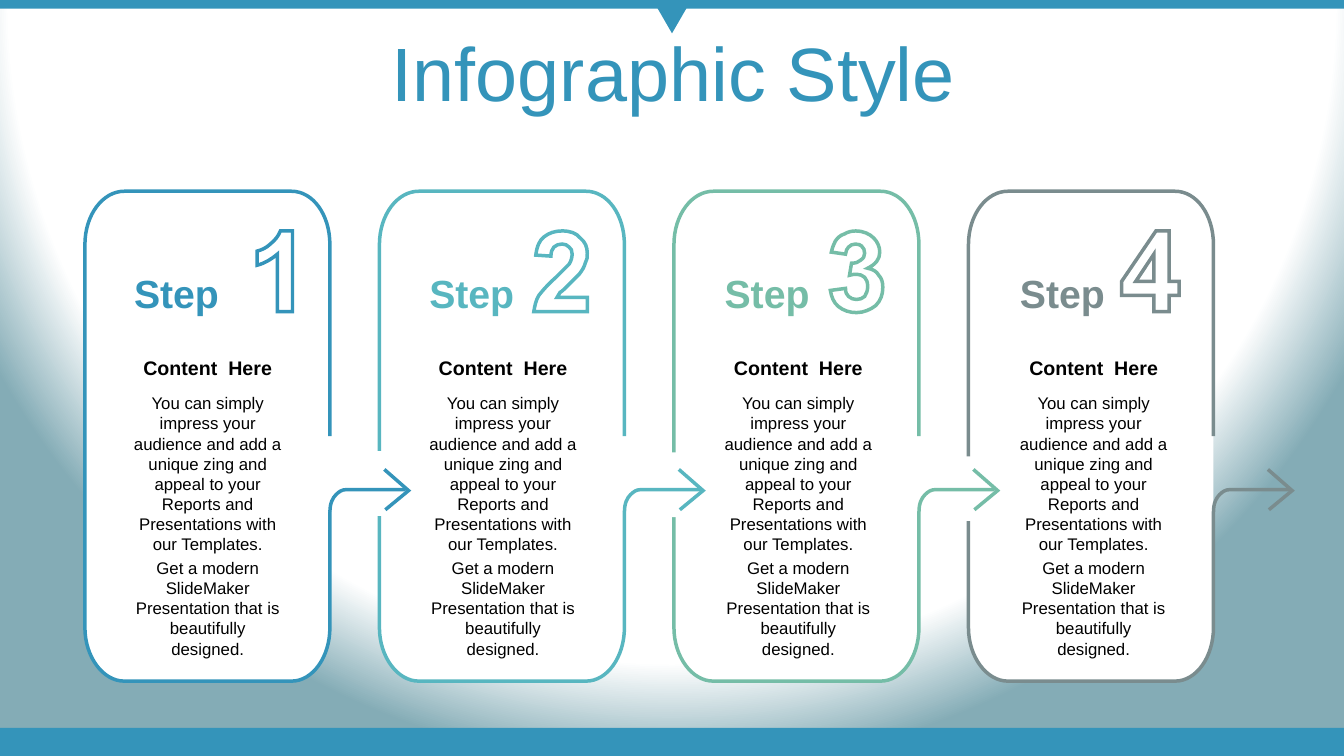
from dataclasses import dataclass

from lxml.etree import SubElement
from pptx import Presentation
from pptx.dml.color import RGBColor
from pptx.enum.shapes import MSO_SHAPE
from pptx.enum.text import MSO_ANCHOR, MSO_AUTO_SIZE, PP_ALIGN
from pptx.oxml import parse_xml
from pptx.oxml.ns import nsdecls, qn
from pptx.util import Cm, Pt


@dataclass(frozen=True)
class Theme:
    font: str = "Arial"
    accent: str = "3494BA"
    white: str = "FFFFFF"
    black: str = "000000"
    haze: str = "84ACB6"
    title_size: int = 54
    step_size: int = 28
    heading_size: int = 14
    body_size: int = 12
    stroke: float = 2.5


@dataclass(frozen=True)
class Box:
    left: float
    top: float
    width: float
    height: float

    def inner(self, left, top, width, height):
        """Box placed relative to this one's top left corner."""
        return Box(self.left + left, self.top + top, width, height)

    def lengths(self):
        return Cm(self.left), Cm(self.top), Cm(self.width), Cm(self.height)


@dataclass(frozen=True)
class Step:
    color: str
    digit: str
    digit_left: float
    notch_top: float | None


THEME = Theme()
PAGE = Box(0, 0, 33.86, 19.05)
FIRST_CARD, CARD_PITCH = Box(2.14, 4.82, 6.17, 12.34), 7.42
FIRST_TEXT, TEXT_PITCH = Box(3.1, 6.65, 4.27, 9.76), 7.44

# Outlines are drawn on a grid of a hundredth of an inch.
GRID = Cm(2.54) / 100
CARD = ("M 243 318 L 243 433 C 243 462 226 486 205 486 L 39 486 C 18 486 0 462 0 433 "
        "L 0 53 C 0 23 18 0 39 0 L 205 0 C 226 0 243 23 243 53 L 243 243")
ARROW_TAIL = "M 318 296 L 259 296 C 255 296 252 298 249 301 C 246 304 243 309 243 318"
ARROW_HEAD = "M 297 276 L 321 297 L 298 316"
ONE = ("M 23 0 L 35 0 L 35 80 L 20 80 L 20 23 C 14 28 8 32 0 34 L 0 20 "
       "C 4 19 9 17 13 13 C 18 9 21 5 23 0 Z")
TWO = ("M 28 0 C 36 0 42 2 46 7 C 51 11 53 16 53 22 C 53 26 53 29 51 32 "
       "C 50 36 48 39 45 43 C 43 45 40 48 35 53 C 31 57 28 60 26 61 C 25 63 24 64 23 66 "
       "L 53 66 L 53 80 L 0 80 C 1 74 2 69 5 64 C 8 60 14 53 22 46 C 29 39 33 35 35 33 "
       "C 37 30 38 26 38 23 C 38 20 37 17 35 16 C 33 14 31 13 28 13 C 25 13 22 14 20 16 "
       "C 18 18 17 21 17 25 L 2 24 C 3 15 6 9 10 6 C 15 2 21 0 28 0 Z")
THREE = ("M 25 0 C 33 0 39 3 43 7 C 47 11 49 16 49 21 C 49 28 45 33 37 37 "
         "C 42 38 46 40 48 44 C 51 47 52 51 52 56 C 52 63 50 69 45 74 C 40 78 33 81 26 81 "
         "C 19 81 13 79 8 75 C 3 71 1 65 0 59 L 15 57 C 15 61 16 63 18 65 "
         "C 20 67 23 68 26 68 C 29 68 32 67 34 65 C 36 62 37 59 37 55 C 37 51 36 48 34 46 "
         "C 32 44 29 43 26 43 C 24 43 22 43 19 44 L 21 32 C 25 32 28 31 30 29 "
         "C 33 27 34 25 34 22 C 34 19 33 17 31 15 C 30 14 28 13 25 13 C 22 13 20 14 18 16 "
         "C 17 17 15 20 15 23 L 1 21 C 2 16 4 12 5 10 C 7 7 10 4 14 3 C 17 1 21 0 25 0 Z")
FOUR = ("M 32 23 L 14 50 L 32 50 Z M 34 0 L 47 0 L 47 50 L 57 50 L 57 64 L 47 64 "
        "L 47 80 L 32 80 L 32 64 L 0 64 L 0 50 Z")

STEPS = [
    Step("3494BA", ONE, 4.34, None),
    Step("58B6C0", TWO, 3.89, 6.55),
    Step("75BDA7", THREE, 3.94, 6.58),
    Step("7A8C8E", FOUR, 3.86, 6.68),
]
HEADING = ["Content  Here"]
BODY = [
    "You can simply impress your audience and add a unique zing and appeal to your "
    "Reports and Presentations with our Templates.",
    "Get a modern SlideMaker Presentation that is beautifully designed.",
]


def rgb(color):
    return RGBColor.from_string(color)


def commands_of(outline):
    """Split an outline into (letter, points) pairs."""
    point_counts = {"M": 1, "L": 1, "C": 3, "Z": 0}
    tokens = iter(outline.split())
    return [(letter, [(int(next(tokens)), int(next(tokens)))
                      for _ in range(point_counts[letter])])
            for letter in tokens]


def bend_curves(shape, commands):
    """Join the three segments of every C command into one Bezier curve."""
    nodes = iter(list(shape.element.find(".//" + qn("a:path"))))
    for letter, points in commands:
        first, *others = [next(nodes) for _ in points or [None]]
        if letter == "C":
            first.tag = qn("a:cubicBezTo")
            for node in others:
                first.append(node[0])
                node.getparent().remove(node)


def add_outline(page, left, top, outline, color, fill=None):
    commands = commands_of(outline)
    builder = page.shapes.build_freeform(*commands[0][1][0], scale=GRID)
    for letter, points in commands[1:]:
        if letter == "M":
            builder.move_to(*points[0])
        else:
            builder.add_line_segments(points, close=letter == "Z")
    shape = builder.convert_to_shape(Cm(left), Cm(top))
    bend_curves(shape, commands)
    shape.shadow.inherit = False
    if fill:
        shape.fill.solid()
        shape.fill.fore_color.rgb = rgb(fill)
    else:
        shape.fill.background()
    shape.line.color.rgb = rgb(color)
    shape.line.width = Pt(THEME.stroke)
    SubElement(shape.element.spPr.find(qn("a:ln")), qn("a:miter"), lim="800000")


def add_block(page, box, color, kind=MSO_SHAPE.RECTANGLE):
    block = page.shapes.add_shape(kind, *box.lengths())
    block.shadow.inherit = False
    block.fill.solid()
    block.fill.fore_color.rgb = rgb(color)
    block.line.fill.background()
    return block


def write(frame, texts, size, color, bold=False, anchor=MSO_ANCHOR.MIDDLE):
    frame.word_wrap = True
    frame.auto_size = MSO_AUTO_SIZE.NONE
    frame.vertical_anchor = anchor
    for index, text in enumerate(texts):
        para = frame.add_paragraph() if index else frame.paragraphs[0]
        para.alignment = PP_ALIGN.CENTER
        para.space_before = Pt(size * 0.2 if index else 0)
        span = para.add_run()
        span.text = text
        span.font.name = THEME.font
        span.font.size = Pt(size)
        span.font.bold = bold
        span.font.color.rgb = rgb(color)


def add_text(page, box, *content, **options):
    write(page.shapes.add_textbox(*box.lengths()).text_frame, *content, **options)


def add_backdrop(page, box):
    """Radial haze, top and bottom bars, and the pointer under the top bar."""
    page.background.fill.gradient()
    gradient = page.element.find(".//" + qn("a:gradFill"))
    stops = [(0, THEME.white), (86, THEME.white), (100, THEME.haze)]
    stop_xml = "".join(f'<a:gs pos="{place * 1000}"><a:srgbClr val="{color}"/></a:gs>'
                       for place, color in stops)
    gradient.getparent().replace(gradient, parse_xml(
        f'<a:gradFill {nsdecls("a")} rotWithShape="1"><a:gsLst>{stop_xml}</a:gsLst>'
        '<a:path path="circle"><a:fillToRect l="50000" t="-80000" r="50000" b="180000"/>'
        '</a:path></a:gradFill>'))
    add_block(page, box.inner(0, box.height - 0.71, box.width, 0.71), THEME.accent)
    add_block(page, box.inner(0, 0, box.width, 0.22), THEME.accent)
    pointer = box.inner((box.width - 0.97) / 2, 0, 0.97, 0.84)
    add_block(page, pointer, THEME.accent, MSO_SHAPE.ISOSCELES_TRIANGLE).rotation = 180


def set_title(page, box):
    title = page.shapes.title
    title.left, title.top, title.width, title.height = box.lengths()
    write(title.text_frame, ["Infographic Style"], THEME.title_size, THEME.accent)
    title.text_frame.paragraphs[0].line_spacing = 0.9


def add_card(page, box, step):
    """Card with its outgoing arrow; the notch lets the previous arrow in."""
    add_outline(page, box.left, box.top, CARD, step.color, THEME.white)
    for outline in (ARROW_TAIL, ARROW_HEAD):
        add_outline(page, box.left, box.top, outline, step.color)
    if step.notch_top is not None:
        add_block(page, box.inner(-1.17, step.notch_top, 2.08, 1.63), THEME.white)
    add_outline(page, box.left + step.digit_left, box.top + 1, step.digit, step.color)


def add_card_text(page, box, step):
    add_text(page, box.inner(0, 0, 2.69, 1.45), ["Step"], THEME.step_size,
             step.color, bold=True)
    add_text(page, box.inner(0, 2.19, box.width, 0.86), HEADING, THEME.heading_size,
             THEME.black, bold=True)
    add_text(page, box.inner(0, 3.13, box.width, 6.63), BODY, THEME.body_size,
             THEME.black, anchor=MSO_ANCHOR.TOP)


def main():
    deck = Presentation()
    deck.slide_width, deck.slide_height = Cm(PAGE.width), Cm(PAGE.height)
    page = deck.slides.add_slide(deck.slide_layouts[5])
    add_backdrop(page, PAGE)
    set_title(page, PAGE.inner(0.89, 0.94, 32.16, 2.01))
    # Right to left, so that each arrow lies over the next card.
    for index, step in reversed(list(enumerate(STEPS))):
        add_card(page, FIRST_CARD.inner(index * CARD_PITCH, 0, FIRST_CARD.width,
                                        FIRST_CARD.height), step)
        add_card_text(page, FIRST_TEXT.inner(index * TEXT_PITCH, 0, FIRST_TEXT.width,
                                             FIRST_TEXT.height), step)
    deck.save("out.pptx")


if __name__ == "__main__":
    main()
